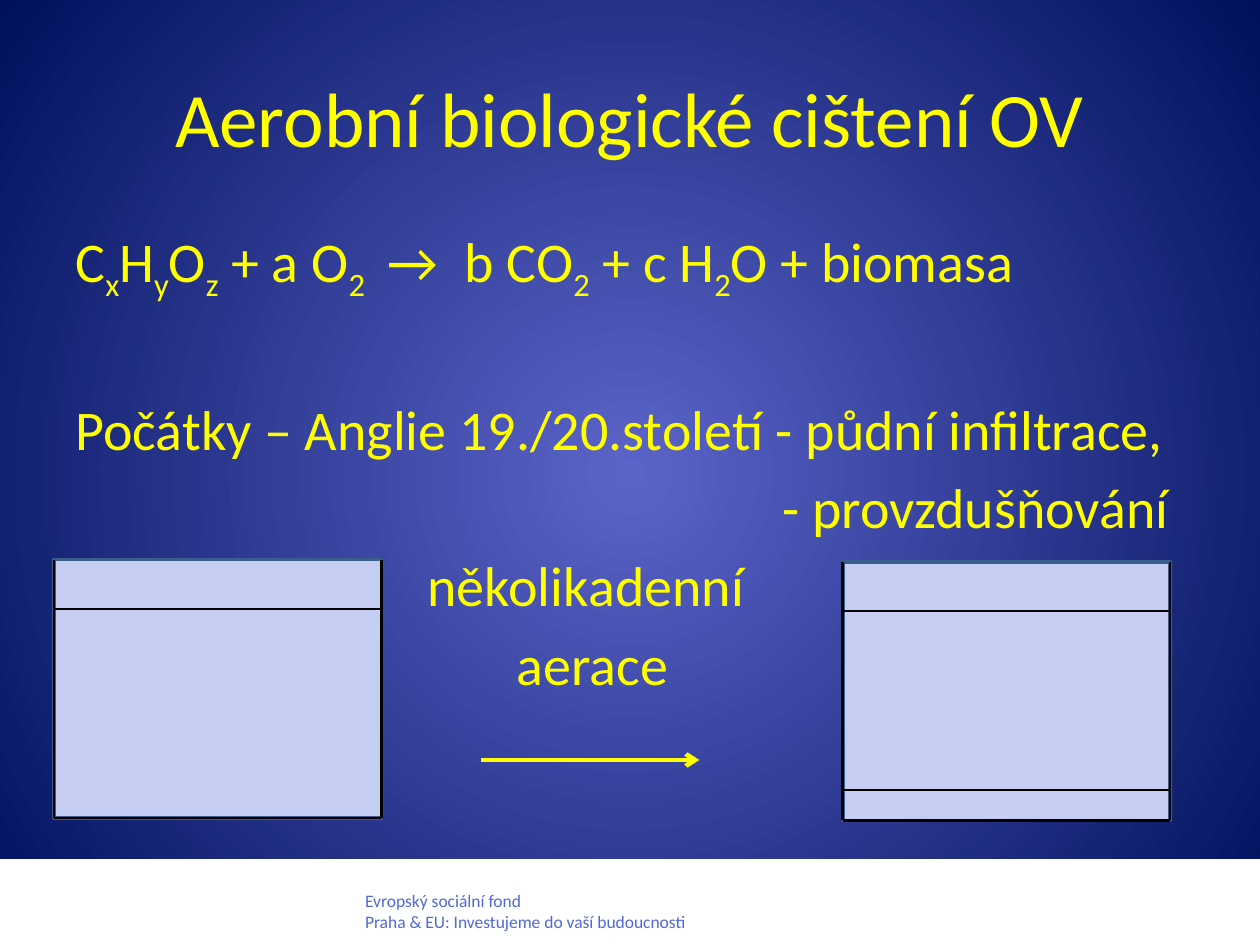
from lxml import etree
from pptx import Presentation
from pptx.dml.color import RGBColor
from pptx.enum.shapes import MSO_CONNECTOR as Connector, MSO_SHAPE as Shape
from pptx.enum.text import MSO_ANCHOR as Anchor, PP_ALIGN as Align
from pptx.oxml import parse_xml
from pptx.oxml.ns import nsdecls, qn
from pptx.util import Cm, Pt

YELLOW, BLACK, WHITE = "FFFF00", "000000", "FFFFFF"
WATER, RIM, FOOTER_BLUE = "C5CDF2", "3A5F8C", "5168D9"
CENTRE_COLOR, EDGE_COLOR = "5C64C9", "00105C"

TITLE = ["Aerobní biologické cištení OV"]
FOOTER = ["Evropský sociální fond", "Praha & EU: Investujeme do vaší budoucnosti"]
# Odd parts between underscores are subscripts.
BODY = [
    "C_x_H_y_O_z_ + a O_2_\t→\tb CO_2_ + c H_2_O + biomasa",
    "Počátky – Anglie 19./20.století - půdní infiltrace,",
    "- provzdušňování",
    "několikadenní",
    "aerace",
]
BODY_INDENTS = [0, 0, 14.26, 7.1, 8.9]
BODY_GAPS = [0, 51.8, 6.4, 6.4, 6.4]
EQUATION_TABS = [6.3, 7.85]

TANK_WIDTH, TANK_HEIGHT = 6.6, 5.21
TANKS = [
    {"left": 1.09, "top": 11.28, "levels": [0.99]},
    {"left": 16.99, "top": 11.33, "levels": [0.99, 4.6]},
]


def color(code):
    return RGBColor.from_string(code)


def add_background(page):
    page.background.fill.solid()
    properties = page.background._cSld.bg.bgPr
    properties.replace(properties[0], parse_xml(
        f'<a:gradFill {nsdecls("a")} rotWithShape="1"><a:gsLst>'
        f'<a:gs pos="0"><a:srgbClr val="{CENTRE_COLOR}"/></a:gs>'
        f'<a:gs pos="100000"><a:srgbClr val="{EDGE_COLOR}"/></a:gs></a:gsLst>'
        '<a:path path="circle"><a:fillToRect l="50000" t="50000" r="50000" b="50000"/>'
        '</a:path></a:gradFill>'))


def add_text(page, lines, left, top, width, height, size=32, fill=YELLOW,
             align=Align.LEFT, anchor=Anchor.TOP, indents=(), gaps=(), tabs=()):
    box = page.shapes.add_textbox(Cm(left), Cm(top), Cm(width), Cm(height))
    frame = box.text_frame
    frame.word_wrap = True
    frame.vertical_anchor = anchor
    for index, line in enumerate(lines):
        para = frame.add_paragraph() if index else frame.paragraphs[0]
        para.alignment = align
        properties = para._p.get_or_add_pPr()
        if indents:
            properties.set("marL", str(Cm(indents[index])))
        if "\t" in line:
            stops = etree.SubElement(properties, qn("a:tabLst"))
            for stop in tabs:
                etree.SubElement(stops, qn("a:tab"), pos=str(Cm(stop)), algn="l")
        if gaps:
            para.space_before = Pt(gaps[index])
        for part, text in enumerate(line.split("_")):
            span = para.add_run()
            span.text = text
            span.font.name = "Calibri"
            span.font.size = Pt(size)
            span.font.color.rgb = color(fill)
            if part % 2:
                span.font._element.set("baseline", "-25000")


def add_rect(page, left, top, width, height, fill, line=None):
    rect = page.shapes.add_shape(Shape.RECTANGLE, Cm(left), Cm(top), Cm(width), Cm(height))
    rect.shadow.inherit = False
    rect.fill.solid()
    rect.fill.fore_color.rgb = color(fill)
    if line:
        rect.line.color.rgb = color(line)
        rect.line.width = Pt(2)
    else:
        rect.line.fill.background()


def add_line(page, x1, y1, x2, y2, width, fill=BLACK, arrow=False):
    line = page.shapes.add_connector(Connector.STRAIGHT, Cm(x1), Cm(y1), Cm(x2), Cm(y2))
    line.line.color.rgb = color(fill)
    line.line.width = Pt(width)
    if arrow:
        etree.SubElement(line.line._get_or_add_ln(), qn("a:tailEnd"), type="arrow")
    etree.SubElement(line._element.spPr, qn("a:effectLst"))


def add_tank(page, left, top, levels):
    right, bottom = left + TANK_WIDTH, top + TANK_HEIGHT
    add_rect(page, left, top, TANK_WIDTH, TANK_HEIGHT, WATER, RIM)
    for level in levels:
        add_line(page, left, top + level, right, top + level, 1.25)
    for x in (left, right):
        add_line(page, x, top, x, bottom, 1.5)
    add_line(page, left, bottom, right, bottom, 1.5)


def main():
    deck = Presentation()
    deck.slide_width, deck.slide_height = Cm(25.4), Cm(19.05)
    page = deck.slides.add_slide(deck.slide_layouts[6])
    add_background(page)
    add_rect(page, 0, 17.32, 25.4, 1.73, WHITE)
    add_text(page, FOOTER, 7.11, 17.81, 9.6, 1.12, size=10, fill=FOOTER_BLUE)
    add_text(page, TITLE, 1.27, 0.76, 22.86, 3.18, size=44,
             align=Align.CENTER, anchor=Anchor.MIDDLE)
    add_text(page, BODY, 1.27, 4.45, 22.86, 12.57, indents=BODY_INDENTS,
             gaps=BODY_GAPS, tabs=EQUATION_TABS)
    for tank in TANKS:
        add_tank(page, **tank)
    add_line(page, 9.7, 15.32, 14.1, 15.32, 2.5, YELLOW, arrow=True)
    deck.save("out.pptx")


if __name__ == "__main__":
    main()
